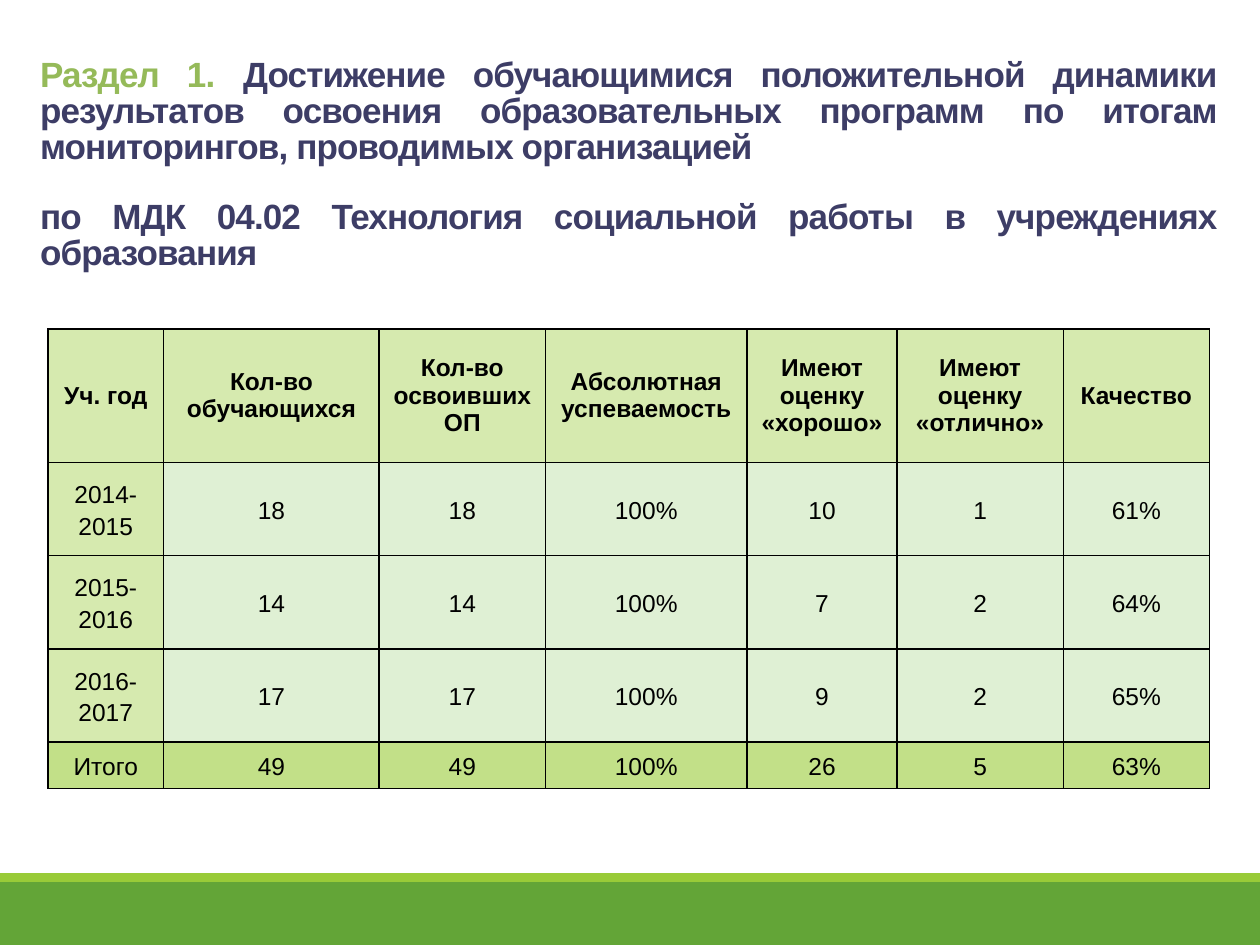
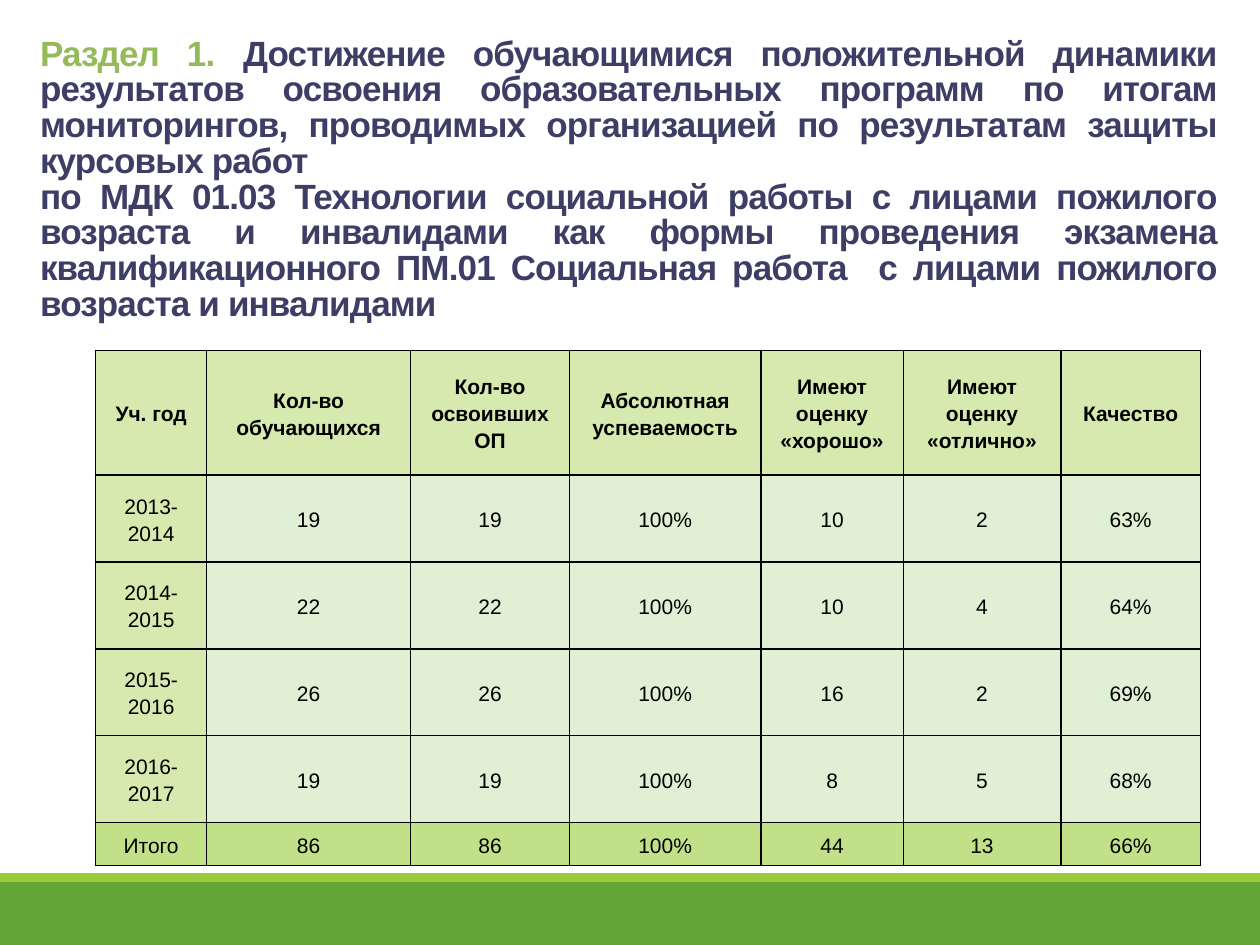
import pptx
import pptx.util
import pptx.dml.color
import pptx.enum.shapes
import pptx.enum.text
import pptx.oxml
import pptx.oxml.ns

Inches = pptx.util.Inches
Pt = pptx.util.Pt
RGBColor = pptx.dml.color.RGBColor
ALIGN = pptx.enum.text.PP_ALIGN

GREEN = RGBColor(0x63, 0xA5, 0x37)
LIME = RGBColor(0x99, 0xCB, 0x38)
SECTION_GREEN = RGBColor(0x95, 0xBA, 0x59)
TITLE_BLUE = RGBColor(0x3D, 0x3D, 0x66)
BLACK = RGBColor(0, 0, 0)
HEADER_FILL = RGBColor(0xD6, 0xEA, 0xAF)
BODY_FILL = RGBColor(0xDF, 0xF0, 0xD4)
TOTAL_FILL = RGBColor(0xC2, 0xE0, 0x88)

FONT = "Arial"
TITLE_SIZE = 20
SECTION = "Раздел 1. "
GOAL = ("Достижение обучающимися положительной динамики результатов освоения "
        "образовательных программ по итогам мониторингов, проводимых организацией")
HEADERS = ["Уч. год", "Кол-во обучающихся", "Кол-во\nосвоивших ОП",
           "Абсолютная успеваемость", "Имеют оценку\n«хорошо»",
           "Имеют оценку\n«отлично»", "Качество"]


def style_run(span, size, color, bold):
    span.font.name = FONT
    span.font.size = Pt(size)
    span.font.bold = bold
    span.font.color.rgb = color


def add_band(page, top, height, color):
    band = page.shapes.add_shape(pptx.enum.shapes.MSO_SHAPE.RECTANGLE,
                                 0, Inches(top), Inches(10), Inches(height))
    band.shadow.inherit = False
    band.fill.solid()
    band.fill.fore_color.rgb = color
    band.line.fill.background()


def add_title(page, top, height, goal, subject, gap):
    box = page.shapes.add_textbox(Inches(0.22), Inches(top), Inches(9.53), Inches(height))
    frame = box.text_frame
    frame.word_wrap = True
    goal_para = frame.paragraphs[0]
    subject_para = frame.add_paragraph()
    subject_para.space_before = Pt(gap)
    for para, text, color in ((goal_para, SECTION, SECTION_GREEN),
                              (goal_para, goal, TITLE_BLUE),
                              (subject_para, subject, TITLE_BLUE)):
        para.alignment = ALIGN.JUSTIFY
        para.line_spacing = 0.85
        span = para.add_run()
        span.text = text
        style_run(span, TITLE_SIZE, color, True)
        span.font._element.set("spc", "-50")


def add_borders(cell):
    properties = cell._tc.get_or_add_tcPr()
    for position, side in enumerate(("lnL", "lnR", "lnT", "lnB")):
        properties.insert(position, pptx.oxml.parse_xml(
            f'<a:{side} {pptx.oxml.ns.nsdecls("a")} w="12700">'
            f'<a:solidFill><a:srgbClr val="{BLACK}"/></a:solidFill></a:{side}>'))


def fill_cell(cell, text, fill, size, bold, spacing):
    cell.fill.solid()
    cell.fill.fore_color.rgb = fill
    cell.vertical_anchor = pptx.enum.text.MSO_ANCHOR.MIDDLE
    cell.margin_left = cell.margin_right = Inches(0.07)
    cell.margin_top = cell.margin_bottom = 0
    cell.text_frame.text = text
    for para in cell.text_frame.paragraphs:
        para.alignment = ALIGN.CENTER
        para.line_spacing = spacing
        for span in para.runs:
            style_run(span, size, BLACK, bold)
    add_borders(cell)


def add_results(page, left, top, widths, heights, results, size, header_spacing):
    rows = [HEADERS] + results
    frame = page.shapes.add_table(len(rows), len(HEADERS), Inches(left), Inches(top),
                                  Inches(sum(widths)), Inches(sum(heights)))
    table = frame.table
    for column, width in zip(table.columns, widths):
        column.width = Inches(width)
    for row, height in zip(table.rows, heights):
        row.height = Inches(height)
    for r, values in enumerate(rows):
        header = r == 0
        for c, value in enumerate(values):
            if r == len(rows) - 1:
                fill = TOTAL_FILL
            else:
                fill = HEADER_FILL if header or c == 0 else BODY_FILL
            fill_cell(table.cell(r, c), value, fill, size, header,
                      header_spacing if header else 1.15)


def add_page(deck):
    page = deck.slides.add_slide(deck.slide_layouts[6])
    add_band(page, 7, 0.5, GREEN)
    add_band(page, 6.93, 0.07, LIME)
    return page


def main():
    deck = pptx.Presentation()
    deck.slide_width = Inches(10)
    deck.slide_height = Inches(7.5)

    page = add_page(deck)
    add_title(page, 0.42, 1.28, GOAL,
              "по МДК 04.02 Технология социальной работы в учреждениях образования",
              TITLE_SIZE)
    add_results(page, 0.38, 2.61, [0.92, 1.71, 1.32, 1.6, 1.19, 1.32, 1.16],
                [1.06] + [0.74] * 3 + [0.37],
                [["2014-2015", "18", "18", "100%", "10", "1", "61%"],
                 ["2015-2016", "14", "14", "100%", "7", "2", "64%"],
                 ["2016-2017", "17", "17", "100%", "9", "2", "65%"],
                 ["Итого", "49", "49", "100%", "26", "5", "63%"]], 14, 1.0)

    page = add_page(deck)
    add_title(page, 0.25, 2.08, GOAL + " по результатам защиты курсовых работ",
              "по МДК 01.03 Технологии социальной работы с лицами пожилого возраста "
              "и инвалидами как формы проведения экзамена квалификационного "
              "ПМ.01 Социальная работа  с лицами пожилого возраста и инвалидами", 0)
    add_results(page, 0.76, 2.78, [0.88, 1.62, 1.26, 1.52, 1.13, 1.25, 1.11],
                [0.99] + [0.69] * 4 + [0.34],
                [["2013-2014", "19", "19", "100%", "10", "2", "63%"],
                 ["2014-2015", "22", "22", "100%", "10", "4", "64%"],
                 ["2015-2016", "26", "26", "100%", "16", "2", "69%"],
                 ["2016-2017", "19", "19", "100%", "8", "5", "68%"],
                 ["Итого", "86", "86", "100%", "44", "13", "66%"]], 12, 1.15)

    deck.save("out.pptx")


if __name__ == "__main__":
    main()
